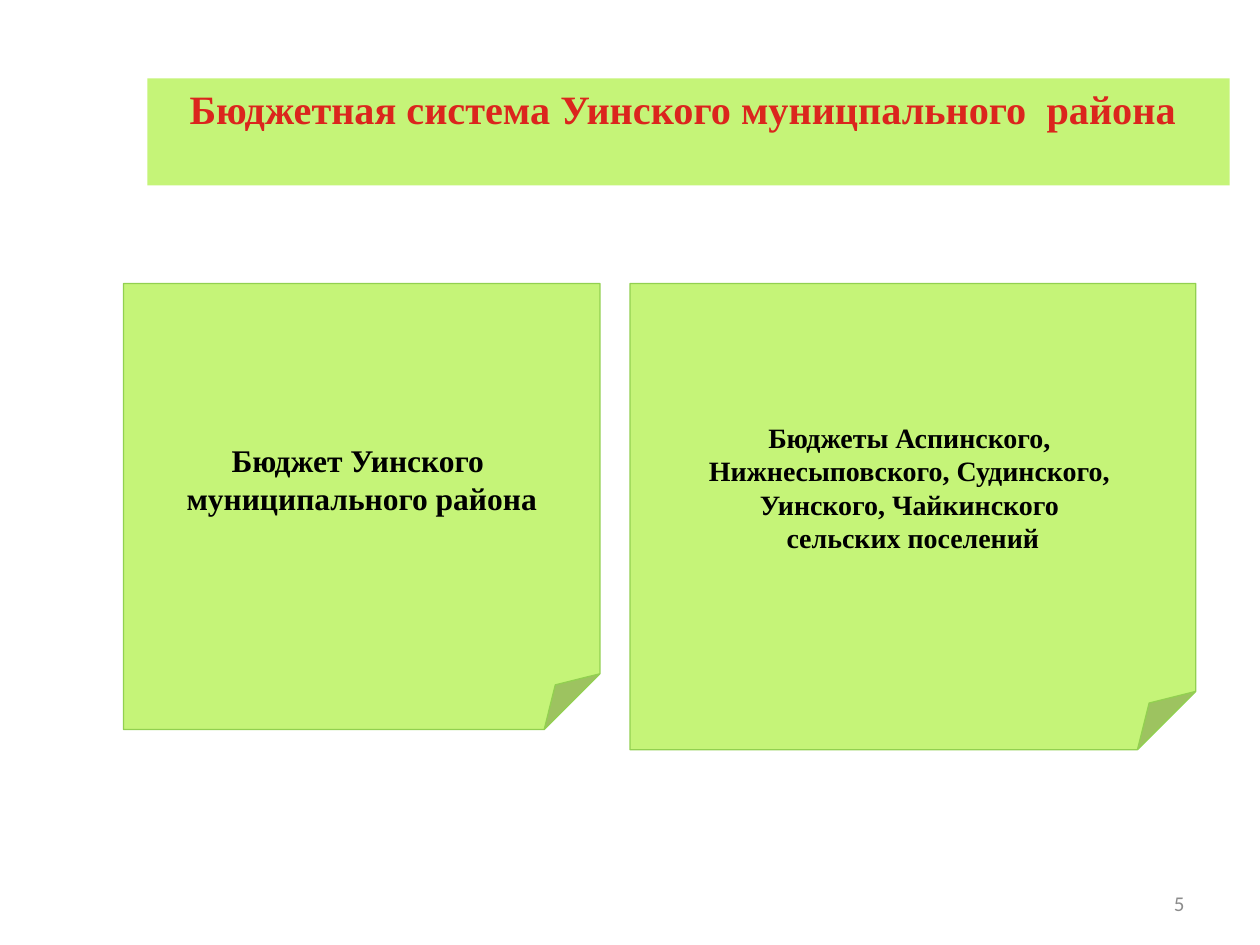
from pptx import Presentation
from pptx.dml.color import RGBColor
from pptx.enum.shapes import MSO_SHAPE
from pptx.enum.text import MSO_ANCHOR, PP_ALIGN
from pptx.util import Pt

RECTANGLE, FOLDED_CORNER = MSO_SHAPE.RECTANGLE, MSO_SHAPE.FOLDED_CORNER
TOP, MIDDLE = MSO_ANCHOR.TOP, MSO_ANCHOR.MIDDLE
CENTER, RIGHT = PP_ALIGN.CENTER, PP_ALIGN.RIGHT

LIME = RGBColor(0xC5, 0xF4, 0x78)
GREEN = RGBColor(0x92, 0xD0, 0x50)
RED = RGBColor(0xDB, 0x25, 0x1D)
BLACK = RGBColor(0, 0, 0)
GRAY = RGBColor(0x8C, 0x8C, 0x8C)
SERIF, SANS = "Times New Roman", "Calibri"


def write(shape, lines, size, color, name=SERIF, bold=True, align=CENTER,
          anchor=MIDDLE, wrap=False):
    frame = shape.text_frame
    frame.word_wrap = wrap
    frame.vertical_anchor = anchor
    frame.text = "\n".join(lines)
    for para in frame.paragraphs:
        para.alignment = align
        para.font.name = name
        para.font.size = Pt(size)
        para.font.bold = bold
        para.font.color.rgb = color


def add_panel(kind, left, top, width, height):
    panel = page.shapes.add_shape(kind, Pt(left), Pt(top), Pt(width), Pt(height))
    panel.shadow.inherit = False
    panel.fill.solid()
    panel.fill.fore_color.rgb = LIME
    return panel


deck = Presentation()
deck.slide_width, deck.slide_height = Pt(720), Pt(540)
page = deck.slides.add_slide(deck.slide_layouts[6])

# Page number
number = page.shapes.add_textbox(Pt(624.2), Pt(501.8), Pt(59.8), Pt(28.8))
write(number, ["5"], 12, GRAY, name=SANS, bold=False, align=RIGHT, wrap=True)

# Budget notes: left, width, height, text size, lines
notes = [
    (70.6, 272.2, 254.9, 18, ["Бюджет Уинского ", "муниципального района"]),
    (360, 323.3, 266.4, 16, ["Бюджеты Аспинского, ",
                             "Нижнесыповского, Судинского, ",
                             "Уинского, Чайкинского ",
                             "сельских поселений"]),
]
for left, width, height, size, lines in notes:
    note = add_panel(FOLDED_CORNER, left, 162, width, height)
    # The folded corner has no entry in adjustments, so its guide is set in XML
    note.element.spPr.prstGeom.rewrite_guides([("adj", 12500)])
    note.line.color.rgb = GREEN
    note.line.width = Pt(0.75)
    write(note, lines, size, BLACK)

# Title banner
banner = add_panel(RECTANGLE, 84.2, 44.8, 618.5, 61.2)
banner.line.fill.background()
write(banner, ["Бюджетная система Уинского муницпального  района "], 23, RED,
      anchor=TOP, wrap=True)

deck.save("out.pptx")
